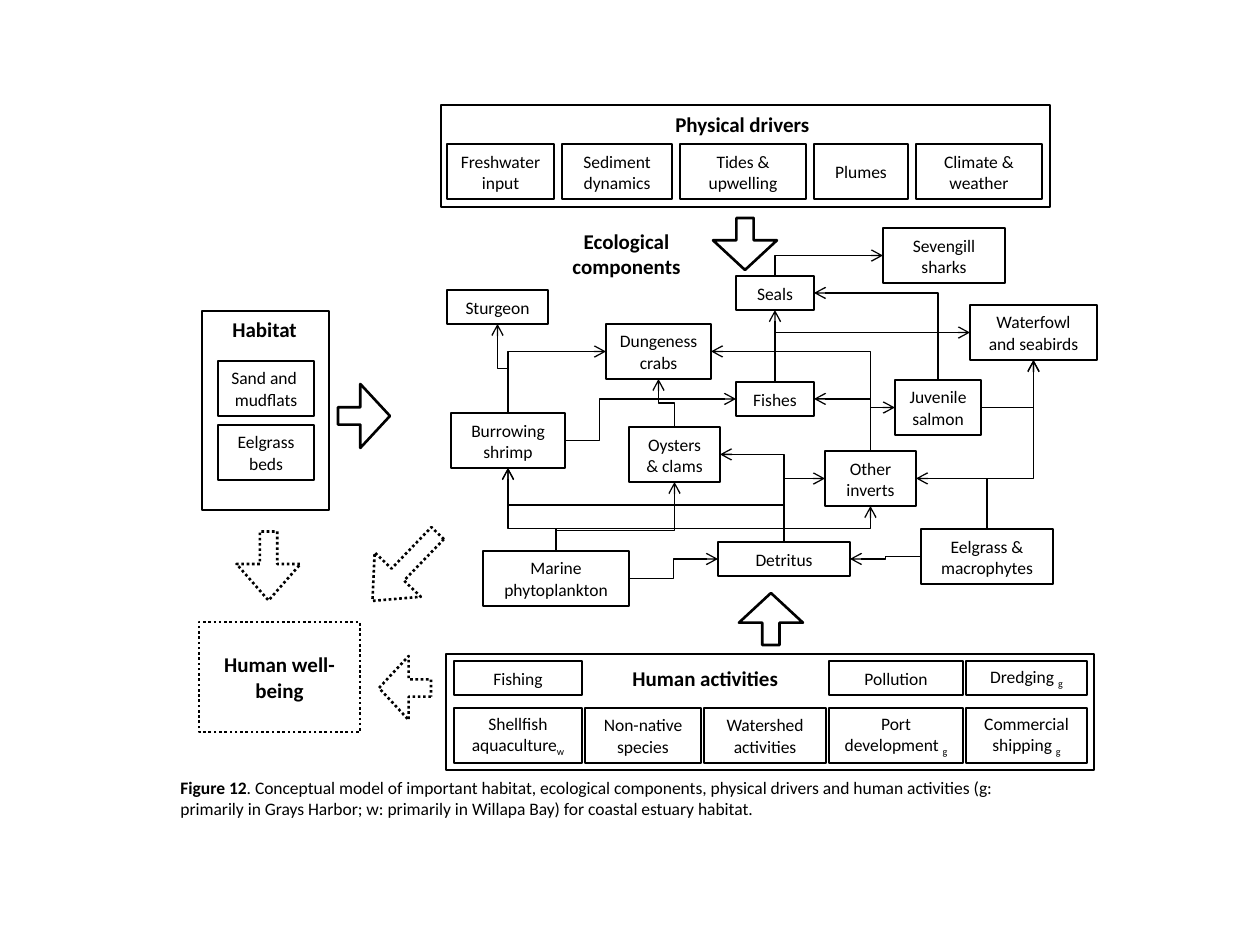
from dataclasses import dataclass

from lxml.etree import SubElement
from pptx import Presentation
from pptx.dml.color import RGBColor
from pptx.enum.dml import MSO_LINE
from pptx.enum.shapes import MSO_CONNECTOR, MSO_SHAPE
from pptx.enum.text import MSO_ANCHOR, PP_ALIGN
from pptx.oxml.ns import qn
from pptx.util import Pt


@dataclass(frozen=True)
class Theme:
    font: str = "Calibri"
    ink: RGBColor = RGBColor(0, 0, 0)
    body: int = 10
    heading: int = 12
    thin: float = 0.75
    thick: float = 1.5


THEME = Theme()
SINGLE, DOUBLE = 34, 55
SIDES = ("top", "left", "bottom", "right")


def px(length):
    return round(length * 914400 / 126)


def style_run(run, size, bold):
    run.font.name = THEME.font
    run.font.size = Pt(size)
    run.font.bold = bold
    run.font.color.rgb = THEME.ink


def write(frame, text, size=THEME.body, bold=False, align=PP_ALIGN.CENTER):
    wording, _, mark = text.partition("_")
    frame.text = wording
    if mark:
        subscript = frame.paragraphs[-1].add_run()
        subscript.text = mark
        subscript.font._element.set("baseline", "-25000")
    for paragraph in frame.paragraphs:
        paragraph.alignment = align
        for run in paragraph.runs:
            style_run(run, size, bold)


def outline(slide, preset, box, weight, dotted=False):
    shape = slide.shapes.add_shape(preset, *map(px, box))
    shape.shadow.inherit = False
    shape.fill.background()
    shape.line.color.rgb = THEME.ink
    shape.line.width = Pt(weight)
    if dotted:
        shape.line.dash_style = MSO_LINE.ROUND_DOT
    return shape


def frame_box(slide, box, dotted=False):
    return outline(slide, MSO_SHAPE.RECTANGLE, box, THEME.thick, dotted)


def component(slide, text, box):
    shape = outline(slide, MSO_SHAPE.RECTANGLE, box, THEME.thin)
    shape.text_frame.word_wrap = True
    shape.text_frame.vertical_anchor = MSO_ANCHOR.MIDDLE
    write(shape.text_frame, text)
    return shape


def heading(slide, text, box, align=PP_ALIGN.LEFT):
    title = slide.shapes.add_textbox(*map(px, box))
    title.text_frame.word_wrap = False
    write(title.text_frame, text, THEME.heading, True, align)


def block_arrow(slide, box, rotation=0, dotted=False):
    arrow = outline(slide, MSO_SHAPE.RIGHT_ARROW, box, THEME.thick, dotted)
    arrow.adjustments[0] = 0.27
    arrow.adjustments[1] = 0.57
    arrow.rotation = rotation


def port(shape, side):
    return {
        "top": (shape.left + shape.width // 2, shape.top),
        "left": (shape.left, shape.top + shape.height // 2),
        "bottom": (shape.left + shape.width // 2, shape.top + shape.height),
        "right": (shape.left + shape.width, shape.top + shape.height // 2),
    }[side]


def link(slide, source, exit_side, target, entry_side, bend=0.5):
    connector = slide.shapes.add_connector(MSO_CONNECTOR.ELBOW, 0, 0, 0, 0)
    connector.begin_connect(source, SIDES.index(exit_side))
    connector.end_connect(target, SIDES.index(entry_side))
    (x1, y1), (x2, y2) = port(source, exit_side), port(target, entry_side)
    upward = exit_side == "top"
    run, rise = abs(x2 - x1), abs(y2 - y1)
    width, height = (rise, run) if upward else (run, rise)
    connector.left = (x1 + x2 - width) // 2
    connector.top = (y1 + y2 - height) // 2
    connector.width, connector.height = width, height

    properties = connector._element.spPr
    properties.xfrm.flipH = not upward and x2 < x1
    properties.xfrm.flipV = x2 < x1 if upward else y2 < y1
    if upward:
        properties.xfrm.set("rot", str(270 * 60000))
    geometry = properties.find(qn("a:prstGeom"))
    if (exit_side in ("top", "bottom")) != (entry_side in ("top", "bottom")):
        geometry.set("prst", "bentConnector2")
    else:
        guides = geometry.find(qn("a:avLst"))
        SubElement(guides, qn("a:gd"), name="adj1", fmla=f"val {round(bend * 100000)}")

    connector.line.color.rgb = THEME.ink
    connector.line.width = Pt(THEME.thin)
    SubElement(properties.find(qn("a:ln")), qn("a:tailEnd"), type="arrow")
    SubElement(properties, qn("a:effectLst"))


def physical_drivers(slide, left, top, width, height):
    frame_box(slide, (left, top, width, height))
    heading(slide, "Physical drivers", (left + 222, top, 161, 38))
    drivers = (("Freshwater input", 107), ("Sediment dynamics", 110),
               ("Tides & upwelling", 126), ("Plumes", 94), ("Climate & weather", 126))
    x = left + 6
    for driver, driver_width in drivers:
        component(slide, driver, (x, top + 39, driver_width, DOUBLE))
        x += driver_width + 8
    block_arrow(slide, (left + 278, top + 107, 52, 64), 90)


def habitat(slide, left, top, width, height):
    frame_box(slide, (left, top, width, height))
    heading(slide, "Habitat", (left + 18, top - 1, 91, 38))
    for row, name in enumerate(("Sand and \nmudflats", "Eelgrass beds")):
        component(slide, name, (left + 16, top + 50 + row * 64, 96, DOUBLE))
    block_arrow(slide, (left + 136, top + 73, 52, 64))


def human_activities(slide, left, top, width, height):
    frame_box(slide, (left, top, width, height))
    heading(slide, "Human activities", (left + 174, top + 5, 173, 38))
    columns = (("Fishing", "Shellfish aquaculture_w", 128),
               (None, "Non-native species", 116),
               (None, "Watershed activities", 122),
               ("Pollution", "Port development _g", 134),
               ("Dredging _g", "Commercial shipping _g", 121))
    x = left + 8
    for upper, lower, column_width in columns:
        if upper:
            component(slide, upper, (x, top + 7, column_width, SINGLE))
        component(slide, lower, (x, top + 54, column_width, DOUBLE))
        x += column_width + 3
    block_arrow(slide, (left + 299, top - 67, 52, 64), 270)


def human_wellbeing(slide, left, top, width, height):
    wellbeing = frame_box(slide, (left, top, width, height), dotted=True)
    wellbeing.text_frame.word_wrap = True
    write(wellbeing.text_frame, "Human well-being", THEME.heading, True)
    for x, y, length, rotation in ((159, -87, 94, 133.9), (180, 34, 52, 180), (35, -88, 69, 90)):
        block_arrow(slide, (left + x, top + y, length, 64), rotation, dotted=True)


def ecological_components(slide, left, top):
    heading(slide, "Ecological\ncomponents", (left + 112, top, 135, 63), PP_ALIGN.CENTER)
    places = {
        "Sevengill sharks": (436, 6, 122, DOUBLE),
        "Seals": (289, 54, 78, SINGLE),
        "Sturgeon": (0, 68, 101, SINGLE),
        "Waterfowl and seabirds": (523, 83, 127, DOUBLE),
        "Dungeness crabs": (159, 102, 105, DOUBLE),
        "Juvenile salmon": (448, 158, 86, DOUBLE),
        "Fishes": (289, 160, 78, SINGLE),
        "Burrowing shrimp": (4, 191, 114, DOUBLE),
        "Oysters & clams": (182, 205, 91, DOUBLE),
        "Other inverts": (378, 229, 91, DOUBLE),
        "Eelgrass & macrophytes": (474, 307, 132, DOUBLE),
        "Detritus": (271, 320, 132, SINGLE),
        "Marine phytoplankton": (36, 329, 146, DOUBLE),
    }
    web = {name: component(slide, name, (left + x, top + y, width, height))
           for name, (x, y, width, height) in places.items()}
    (sharks, seals, sturgeon, waterfowl, crabs, salmon, fishes,
     shrimp, oysters, inverts, eelgrass, detritus, phytoplankton) = web.values()
    feeding = (
        (eelgrass, "top", waterfowl, "bottom", 0.3),
        (eelgrass, "left", detritus, "right"),
        (eelgrass, "top", inverts, "right"),
        (phytoplankton, "right", detritus, "left"),
        (phytoplankton, "top", oysters, "bottom", 0.3),
        (phytoplankton, "top", inverts, "bottom"),
        (phytoplankton, "top", shrimp, "bottom", 0.27),
        (detritus, "top", shrimp, "bottom"),
        (detritus, "top", inverts, "left"),
        (detritus, "top", oysters, "right"),
        (shrimp, "top", sturgeon, "bottom"),
        (shrimp, "top", crabs, "left"),
        (shrimp, "right", fishes, "left", 0.2),
        (oysters, "top", crabs, "bottom"),
        (inverts, "top", salmon, "left"),
        (inverts, "top", fishes, "right"),
        (inverts, "top", crabs, "right"),
        (salmon, "right", waterfowl, "bottom"),
        (salmon, "top", seals, "right"),
        (fishes, "top", seals, "bottom"),
        (fishes, "top", waterfowl, "left"),
        (seals, "top", sharks, "left"),
    )
    for route in feeding:
        link(slide, *route)


def caption(slide, *box):
    legend = slide.shapes.add_textbox(*map(px, box)).text_frame
    legend.word_wrap = True
    write(legend, "Figure 12", bold=True, align=PP_ALIGN.LEFT)
    description = legend.paragraphs[0].add_run()
    description.text = (
        ". Conceptual model of important habitat, ecological components, physical drivers "
        "and human activities (g: primarily in Grays Harbor; w: primarily in Willapa Bay) "
        "for coastal estuary habitat.")
    style_run(description, THEME.body, False)


def main():
    deck = Presentation()
    deck.slide_width, deck.slide_height = px(1260), px(945)
    slide = deck.slides.add_slide(deck.slide_layouts[6])
    physical_drivers(slide, 441, 105, 609, 102)
    habitat(slide, 202, 311, 127, 199)
    ecological_components(slide, 447, 222)
    human_wellbeing(slide, 199, 622, 161, 110)
    human_activities(slide, 446, 654, 648, 116)
    caption(slide, 168, 771, 878, 55)
    deck.save("out.pptx")


if __name__ == "__main__":
    main()
